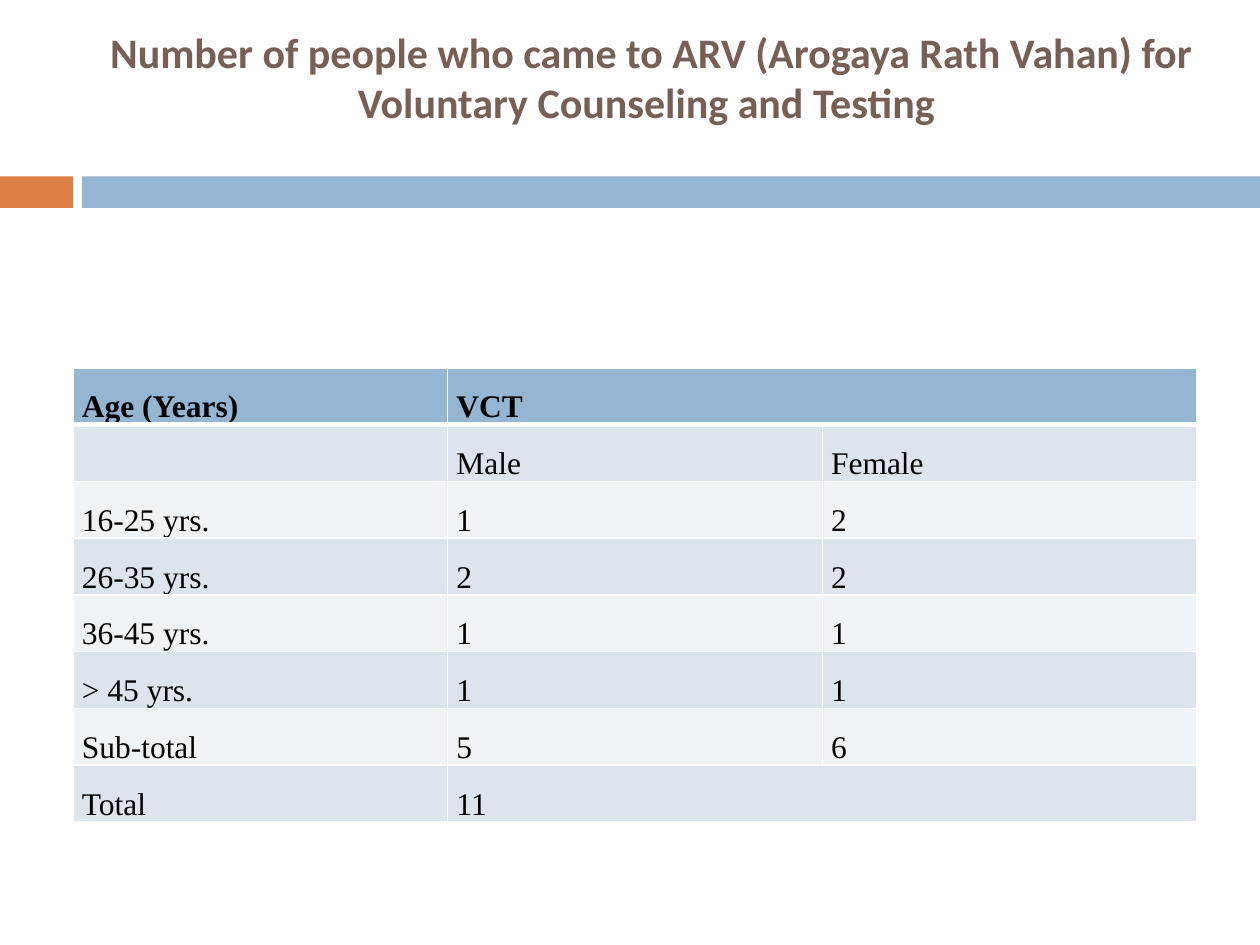
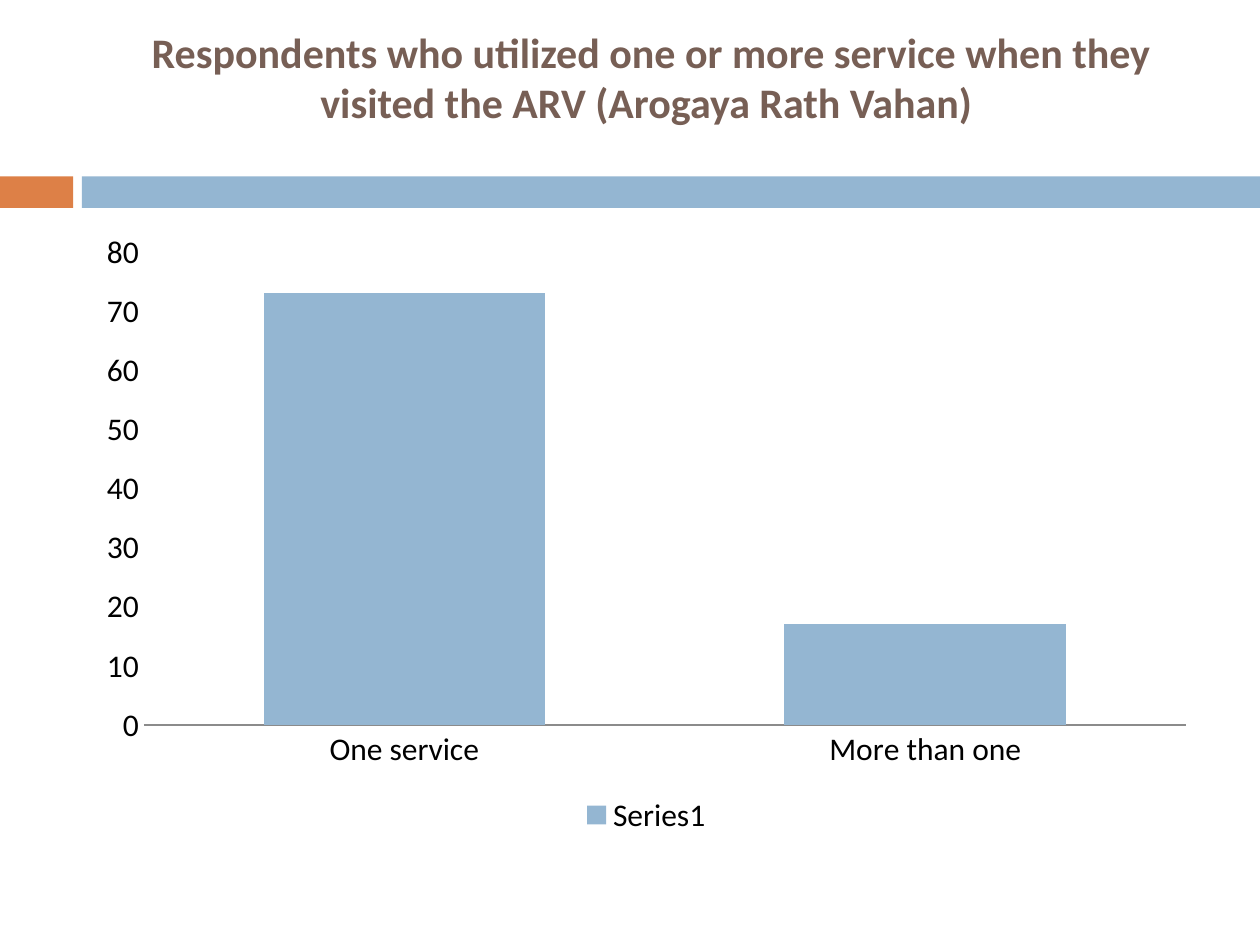
from dataclasses import dataclass

import pptx
import pptx.chart.data
import pptx.dml.color
import pptx.enum.chart
import pptx.enum.shapes
import pptx.enum.text
import pptx.oxml
import pptx.oxml.ns
import pptx.util
from pptx.util import Inches

BLUE = "94B6D2"
ORANGE = "DD8047"
BROWN = "775F55"
BLACK = "000000"
WHITE = "FFFFFF"
AXIS_GRAY = "8B8B8B"
ROW_FILLS = ("DCE5EE", "EEF3F7")
HEADING_FONT = "Calibri"
TABLE_FONT = "Times New Roman"


@dataclass(frozen=True)
class Band:
    left: float
    width: float
    color: str


BANDS = (Band(0, 0.58, ORANGE), Band(0.65, 9.35, BLUE))

TABLE_ROWS = (
    ("Age (Years)", "VCT", None),
    ("", "Male", "Female"),
    ("16-25 yrs.", "1", "2"),
    ("26-35 yrs.", "2", "2"),
    ("36-45 yrs.", "1", "1"),
    ("> 45 yrs.", "1", "1"),
    ("Sub-total", "5", "6"),
    ("Total", "11", None),
)


def rgb(color: str) -> pptx.dml.color.RGBColor:
    return pptx.dml.color.RGBColor.from_string(color)


def style_font(font, name: str, size: float, color: str, bold: bool = False) -> None:
    font.name = name
    font.size = pptx.util.Pt(size)
    font.bold = bold
    font.color.rgb = rgb(color)


def add_band(slide, band: Band) -> None:
    shape = slide.shapes.add_shape(
        pptx.enum.shapes.MSO_SHAPE.RECTANGLE,
        Inches(band.left), Inches(1.4), Inches(band.width), Inches(0.25),
    )
    shape.shadow.inherit = False
    shape.fill.solid()
    shape.fill.fore_color.rgb = rgb(band.color)
    shape.line.fill.background()


def add_title(slide, title: str) -> None:
    box = slide.shapes.add_textbox(Inches(0.67), Inches(0.25), Inches(8.92), Inches(1.08))
    frame = box.text_frame
    frame.word_wrap = True
    frame.vertical_anchor = pptx.enum.text.MSO_ANCHOR.MIDDLE
    frame.margin_top = 0
    frame.margin_bottom = Inches(0.36)
    paragraph = frame.paragraphs[0]
    paragraph.alignment = pptx.enum.text.PP_ALIGN.CENTER
    run = paragraph.add_run()
    run.text = title
    style_font(run.font, HEADING_FONT, 24, BROWN, bold=True)


def add_titled_slide(presentation, title: str):
    """Add a blank slide with the shared bands and title."""
    slide = presentation.slides.add_slide(presentation.slide_layouts[6])
    for band in BANDS:
        add_band(slide, band)
    add_title(slide, title)
    return slide


def add_cell_borders(cell, top: float, bottom: float) -> None:
    """Draw white borders; widths are in points."""
    properties = cell._tc.get_or_add_tcPr()
    for side, width in (("L", 1), ("R", 1), ("T", top), ("B", bottom)):
        properties.append(pptx.oxml.parse_xml(
            f'<a:ln{side} {pptx.oxml.ns.nsdecls("a")} w="{pptx.util.Pt(width)}">'
            f'<a:solidFill><a:srgbClr val="{WHITE}"/></a:solidFill></a:ln{side}>'
        ))


def fill_cell(cell, text: str, row_index: int) -> None:
    is_header = row_index == 0
    add_cell_borders(cell, top=3 if row_index == 1 else 1, bottom=3 if is_header else 1)
    cell.fill.solid()
    cell.fill.fore_color.rgb = rgb(BLUE if is_header else ROW_FILLS[(row_index - 1) % 2])
    cell.margin_left = cell.margin_right = Inches(0.07)
    cell.margin_top = cell.margin_bottom = 0
    cell.vertical_anchor = pptx.enum.text.MSO_ANCHOR.BOTTOM
    if text:
        paragraph = cell.text_frame.paragraphs[0]
        paragraph.alignment = pptx.enum.text.PP_ALIGN.JUSTIFY
        paragraph.line_spacing = 1.5
        run = paragraph.add_run()
        run.text = text
        style_font(run.font, TABLE_FONT, 18, BLACK, bold=is_header)


def add_testing_table(slide) -> None:
    row_height = Inches(0.38)
    table = slide.shapes.add_table(
        len(TABLE_ROWS), len(TABLE_ROWS[0]),
        Inches(0.58), Inches(2.92), Inches(8.92), row_height * len(TABLE_ROWS),
    ).table
    table.first_row = False
    table.horz_banding = False
    for row_index, row in enumerate(TABLE_ROWS):
        for column_index, text in enumerate(row):
            cell = table.cell(row_index, column_index)
            fill_cell(cell, text or "", row_index)
            if text is None:
                table.cell(row_index, column_index - 1).merge(cell)


def add_service_chart(slide) -> None:
    chart_data = pptx.chart.data.CategoryChartData()
    chart_data.categories = ("One service", "More than one")
    chart_data.add_series("Series1", (73, 17))
    chart = slide.shapes.add_chart(
        pptx.enum.chart.XL_CHART_TYPE.COLUMN_CLUSTERED,
        Inches(0.67), Inches(1.75), Inches(8.92), Inches(4.92), chart_data,
    ).chart
    style_font(chart.font, HEADING_FONT, 18, BLACK)
    chart.has_title = False
    chart.has_legend = True
    chart.legend.position = pptx.enum.chart.XL_LEGEND_POSITION.BOTTOM
    chart.legend.include_in_layout = False

    for axis in (chart.category_axis, chart.value_axis):
        axis.has_major_gridlines = False
        axis.major_tick_mark = pptx.enum.chart.XL_TICK_MARK.NONE
    chart.category_axis.format.line.color.rgb = rgb(AXIS_GRAY)
    chart.value_axis.format.line.fill.background()
    chart.value_axis.minimum_scale = 0
    chart.value_axis.maximum_scale = 80
    chart.value_axis.major_unit = 10

    plot = chart.plots[0]
    plot.vary_by_categories = False
    plot.gap_width = 85
    plot.overlap = -5
    columns = plot.series[0].format
    columns.fill.solid()
    columns.fill.fore_color.rgb = rgb(BLUE)


def main() -> None:
    presentation = pptx.Presentation()
    presentation.slide_width = Inches(10)
    presentation.slide_height = Inches(7.5)
    add_testing_table(add_titled_slide(
        presentation,
        " Number of people who came to ARV (Arogaya Rath Vahan) for "
        "Voluntary Counseling and Testing",
    ))
    add_service_chart(add_titled_slide(
        presentation,
        " Respondents who utilized one or more service when they "
        "visited the ARV (Arogaya Rath Vahan)",
    ))
    presentation.save("out.pptx")


if __name__ == "__main__":
    main()
